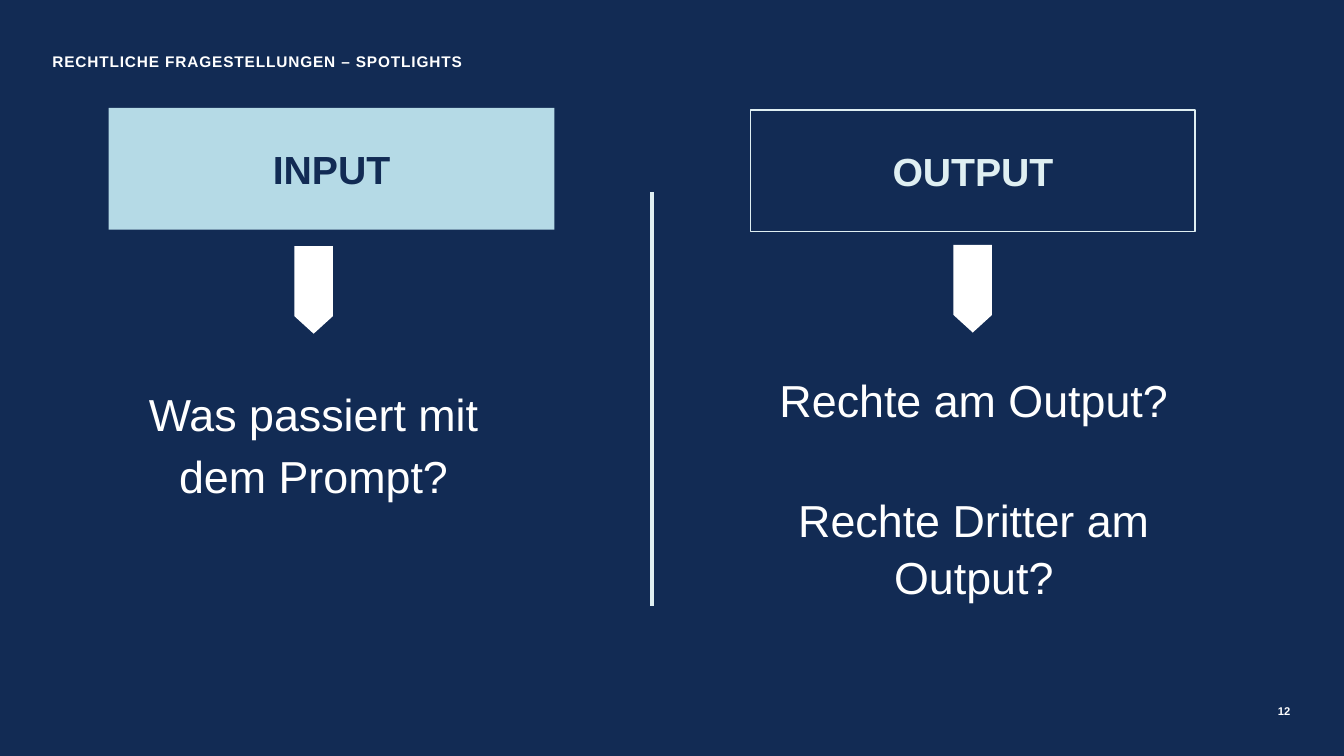
"""Build the slide on legal questions about input and output."""
from dataclasses import dataclass

from pptx import Presentation
from pptx.dml.color import RGBColor
from pptx.enum.shapes import MSO_CONNECTOR as Link, MSO_SHAPE as Form
from pptx.enum.text import MSO_ANCHOR as Anchor, PP_ALIGN as Align
from pptx.oxml.ns import qn
from pptx.shapes.autoshape import Shape
from pptx.slide import Slide
from pptx.text.text import TextFrame
from pptx.util import Cm, Pt
from lxml.etree import SubElement

NAVY, WHITE, ICE, SKY = "122B54", "FFFFFF", "DFEFF2", "B5DAE6"


@dataclass
class Area:
    left: float
    top: float
    width: float
    height: float

    def place(self) -> tuple[Cm, Cm, Cm, Cm]:
        return Cm(self.left), Cm(self.top), Cm(self.width), Cm(self.height)


@dataclass
class Topic:
    title: str
    head: Area
    fill: str
    line: str | None
    ink: str
    arrow: Area
    body: Area
    asks: list[str]
    gap: float


TOPICS = [
    Topic("INPUT", Area(2.74, 2.72, 11.23, 3.07), SKY, None, NAVY,
          Area(7.42, 6.2, 0.97, 2.21), Area(3.28, 9.19, 9.25, 3.53),
          ["Was passiert mit", "dem Prompt?"], 2),
    Topic("OUTPUT", Area(18.92, 2.77, 11.2, 3.07), NAVY, ICE, ICE,
          Area(24.03, 6.17, 0.97, 2.21), Area(18.97, 8.41, 11.15, 7.29),
          ["Rechte am Output?", "Rechte Dritter am Output?"], 44),
]


def tint(code: str) -> RGBColor:
    return RGBColor.from_string(code)


def inset(frame: TextFrame, side: float, top: float, base: float) -> None:
    frame.word_wrap = True
    frame.margin_left = frame.margin_right = Cm(side)
    frame.margin_top, frame.margin_bottom = Cm(top), Cm(base)


def write(frame: TextFrame, text: str, size: float, ink: str,
          bold: bool = True, align: Align = Align.LEFT) -> None:
    frame.text = text
    for para in frame.paragraphs:
        para.alignment = align
        for run in para.runs:
            font = run.font
            font.name, font.size, font.bold = "Arial", Pt(size), bold
            font.color.rgb = tint(ink)


def label(slide: Slide, area: Area) -> TextFrame:
    frame = slide.shapes.add_textbox(*area.place()).text_frame
    inset(frame, 0, 0, 0)
    return frame


def block(slide: Slide, form: Form, area: Area, fill: str,
          line: str | None = None) -> Shape:
    shape = slide.shapes.add_shape(form, *area.place())
    shape.shadow.inherit = False
    shape.fill.solid()
    shape.fill.fore_color.rgb = tint(fill)
    if line:
        shape.line.color.rgb = tint(line)
        shape.line.width = Pt(1)
    else:
        shape.line.fill.background()
    return shape


def draw(slide: Slide, topic: Topic) -> None:
    head = block(slide, Form.RECTANGLE, topic.head, topic.fill, topic.line)
    frame = head.text_frame
    inset(frame, 0.3, 0.3, 0.3)
    frame.vertical_anchor = Anchor.MIDDLE
    write(frame, topic.title, 28, topic.ink, align=Align.CENTER)

    block(slide, Form.FLOWCHART_OFFPAGE_CONNECTOR, topic.arrow, WHITE)

    frame = label(slide, topic.body)
    inset(frame, 0.41, 0.41, 0)
    frame.vertical_anchor = Anchor.MIDDLE
    write(frame, "\n".join(topic.asks), 32, WHITE, False, Align.CENTER)
    for rank, para in enumerate(frame.paragraphs):
        para.line_spacing = 1.05
        para.space_before = Pt(topic.gap if rank else 0)
        para.space_after = Pt(2)


def divide(slide: Slide) -> None:
    line = slide.shapes.add_connector(
        Link.STRAIGHT, Cm(16.43), Cm(4.85), Cm(16.43), Cm(15.27))
    line.line.color.rgb = tint(ICE)
    line.line.width = Pt(2.25)
    SubElement(line._element.spPr, qn("a:effectLst"))


def main() -> None:
    deck = Presentation()
    deck.slide_width, deck.slide_height = Cm(33.87), Cm(19.05)
    slide = deck.slides.add_slide(deck.slide_layouts[6])
    back = slide.background.fill
    back.solid()
    back.fore_color.rgb = tint(NAVY)

    title = label(slide, Area(1.32, 1.32, 25.91, 0.71))
    write(title, "RECHTLICHE FRAGESTELLUNGEN – SPOTLIGHTS", 11, WHITE)
    title.paragraphs[0].runs[0]._r.get_or_add_rPr().set("spc", "60")

    for topic in TOPICS:
        draw(slide, topic)
    divide(slide)

    page = label(slide, Area(31.78, 17.7, 0.74, 0.41))
    page.vertical_anchor = Anchor.MIDDLE
    write(page, "12", 8, WHITE, align=Align.RIGHT)
    page.paragraphs[0].line_spacing = Pt(10)

    deck.save("out.pptx")


if __name__ == "__main__":
    main()
